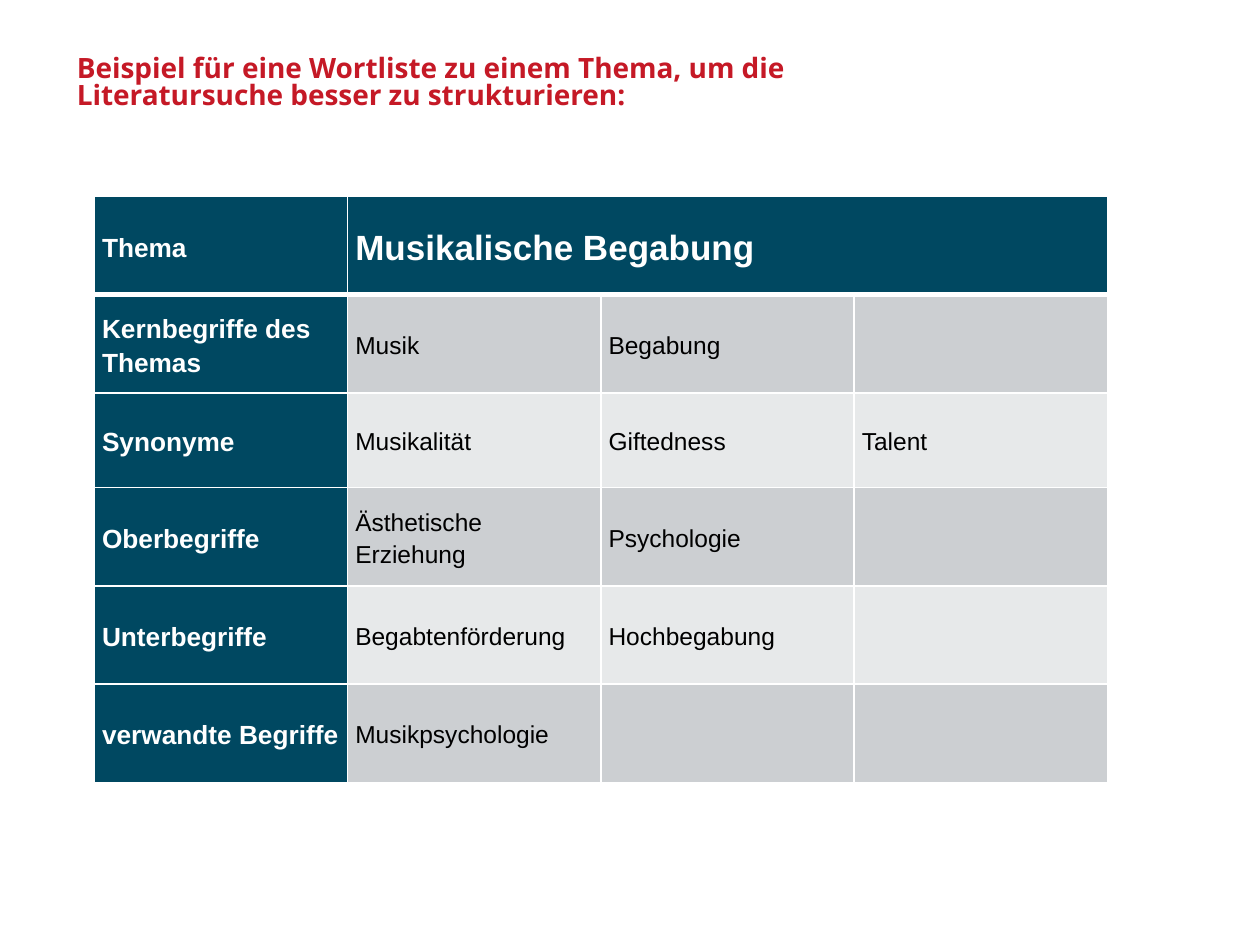
from lxml import etree
from pptx import Presentation
from pptx.dml.color import RGBColor
from pptx.enum.text import MSO_ANCHOR, MSO_AUTO_SIZE, PP_ALIGN
from pptx.oxml.ns import qn
from pptx.util import Inches, Pt

TOP, MIDDLE = MSO_ANCHOR.TOP, MSO_ANCHOR.MIDDLE
NO_FIT = MSO_AUTO_SIZE.NONE
LEFT = PP_ALIGN.LEFT
TITLE_ONLY = 5
COLORS = {
    "red": "C51926",
    "navy": "004861",
    "dark_band": "CCCFD2",
    "light_band": "E7E9EA",
    "white": "FFFFFF",
    "black": "000000",
}
TITLE = "Beispiel für eine Wortliste zu einem Thema, um die Literatursuche besser zu strukturieren:"
WORD_LIST = [
    ["Thema", "Musikalische Begabung", "", ""],
    ["Kernbegriffe des Themas", "Musik", "Begabung", ""],
    ["Synonyme", "Musikalität", "Giftedness", "Talent"],
    ["Oberbegriffe", "Ästhetische Erziehung", "Psychologie", ""],
    ["Unterbegriffe", "Begabtenförderung", "Hochbegabung", ""],
    ["verwandte Begriffe", "Musikpsychologie", "", ""],
]
ROW_HEIGHTS = [0.78, 0.78, 0.75, 0.78, 0.78, 0.78]
COLUMN_WIDTH = 2.01


class SlideBuilder:
    formats = {
        "title": {"name": "Open Sans", "size": Pt(16), "bold": True, "color": "red"},
        "topic": {"name": "Arial", "size": Pt(20), "bold": True, "color": "white"},
        "label": {"name": "Arial", "size": Pt(15), "bold": True, "color": "white"},
        "term": {"name": "Arial", "size": Pt(14), "bold": False, "color": "black"},
    }

    def __init__(self, deck):
        self.page = deck.slides.add_slide(deck.slide_layouts[TITLE_ONLY])

    def add_text(self, frame, text, style, spacing):
        para = frame.paragraphs[0]
        para.alignment = LEFT
        para.line_spacing = spacing
        span = para.add_run()
        span.text = text
        for key, value in self.formats[style].items():
            if key == "color":
                span.font.color.rgb = RGBColor.from_string(COLORS[value])
            else:
                setattr(span.font, key, value)

    def title(self, text, left, top, width, height):
        box = self.page.shapes.title
        place = {"left": left, "top": top, "width": width, "height": height}
        for key, value in place.items():
            setattr(box, key, Inches(value))
        frame = box.text_frame
        layout = {"word_wrap": True, "auto_size": NO_FIT, "vertical_anchor": TOP}
        for key, value in layout.items():
            setattr(frame, key, value)
        self.add_text(frame, text, "title", 0.8)

    def borders(self, cell, widths):
        props = cell._tc.get_or_add_tcPr()
        for index, (side, width) in enumerate(widths.items()):
            line = etree.Element(qn(f"a:{side}"), w=str(Pt(width)))
            fill = etree.SubElement(line, qn("a:solidFill"))
            etree.SubElement(fill, qn("a:srgbClr"), val=COLORS["white"])
            props.insert(index, line)

    def cell(self, cell, text, style, fill, widths):
        cell.fill.solid()
        cell.fill.fore_color.rgb = RGBColor.from_string(COLORS[fill])
        layout = {
            "vertical_anchor": MIDDLE,
            "margin_left": Inches(0.06),
            "margin_right": Inches(0.06),
            "margin_top": 0,
            "margin_bottom": 0,
        }
        for key, value in layout.items():
            setattr(cell, key, value)
        self.borders(cell, widths)
        if text:
            self.add_text(cell.text_frame, text, style, 1.15)

    def table(self, rows, left, top, column_width, row_heights):
        columns = len(rows[0])
        size = (column_width * columns, sum(row_heights))
        place = [Inches(value) for value in (left, top, *size)]
        grid = self.page.shapes.add_table(len(rows), columns, *place).table
        for column in grid.columns:
            column.width = Inches(column_width)
        for r, (texts, height) in enumerate(zip(rows, row_heights)):
            grid.rows[r].height = Inches(height)
            band = "dark_band" if r % 2 else "light_band"
            widths = {
                "lnL": 1,
                "lnR": 1,
                "lnT": 3 if r == 1 else 1,
                "lnB": 3 if r == 0 else 1,
            }
            for c, text in enumerate(texts):
                style = "label" if c == 0 else "topic" if r == 0 else "term"
                fill = band if style == "term" else "navy"
                self.cell(grid.cell(r, c), text, style, fill, widths)
        grid.cell(0, 1).merge(grid.cell(0, columns - 1))


def main():
    deck = Presentation()
    deck.slide_width, deck.slide_height = Inches(10), Inches(7.5)
    builder = SlideBuilder(deck)
    builder.title(TITLE, 0.51, 0.4, 6.69, 0.54)
    builder.table(WORD_LIST, 0.75, 1.56, COLUMN_WIDTH, ROW_HEIGHTS)
    deck.save("out.pptx")


if __name__ == "__main__":
    main()
